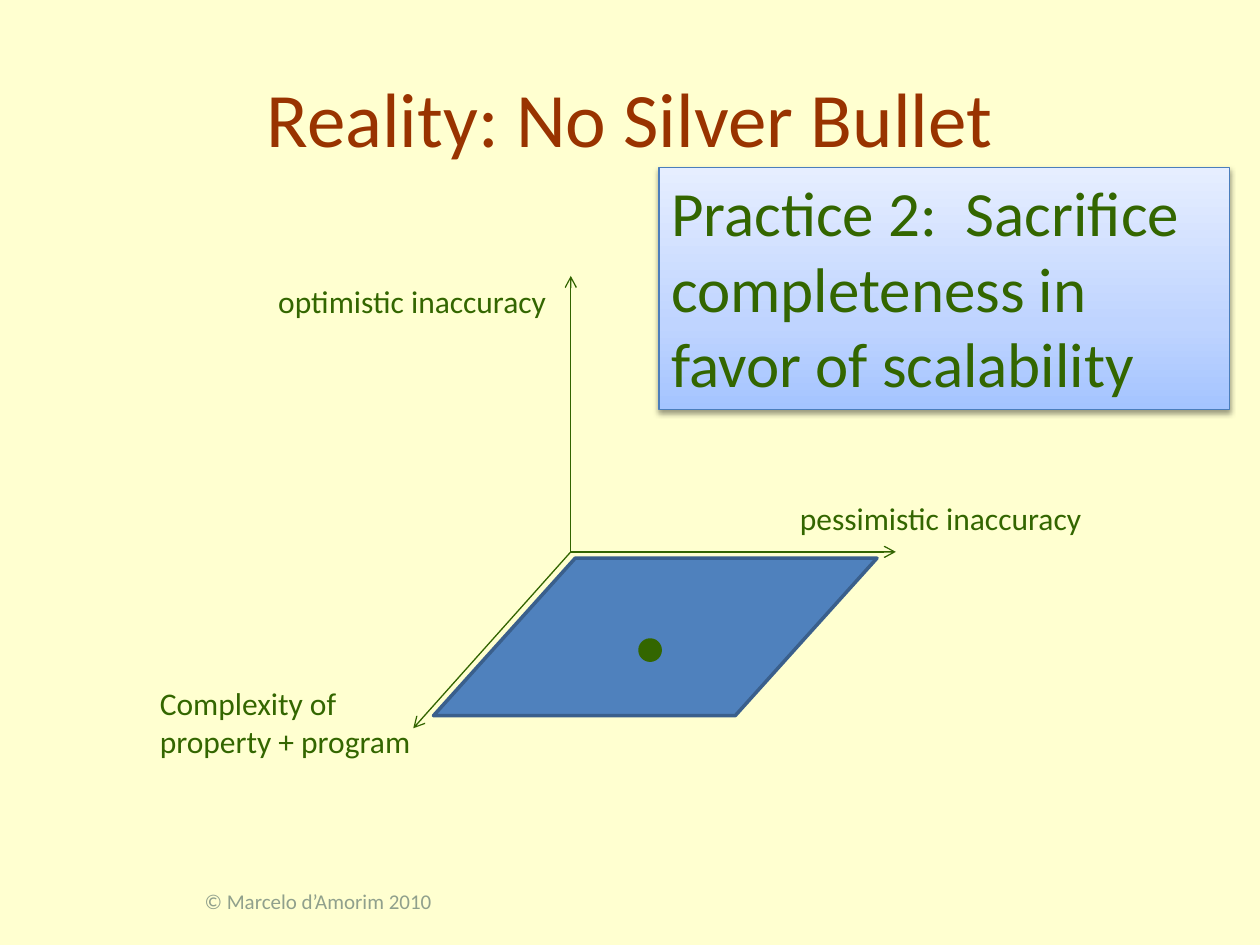
from lxml import etree
from pptx import Presentation
from pptx.dml.color import RGBColor
from pptx.enum import shapes, text
from pptx.oxml.ns import qn
from pptx.util import Inches, Pt

CREAM = RGBColor(0xFF, 0xFF, 0xD0)
RUST = RGBColor(0x99, 0x33, 0x00)
GREEN = RGBColor(0x33, 0x66, 0x00)
AXIS_GREEN = RGBColor(0x32, 0x64, 0x00)
GREY = RGBColor(0x90, 0xA0, 0x8C)
BLUE = RGBColor(0x4F, 0x81, 0xBD)
DARK_BLUE = RGBColor(0x3A, 0x5F, 0x8C)
BOX_LINE = RGBColor(0x4B, 0x7E, 0xBC)
BOX_STOPS = [(0, "A4C4FF"), (35, "BFD4FF"), (100, "E6EEFF")]

ORIGIN = (4.53, 4.38)
AXIS_ENDS = [(4.53, 2.19), (7.11, 4.38), (3.28, 5.78)]
AXIS_LABELS = [
    ("optimistic inaccuracy", (2.11, 2.19, 2.35, 0.4)),
    ("pessimistic inaccuracy", (6.25, 3.91, 2.46, 0.4)),
    ("Complexity of\nproperty + program", (1.17, 5.38, 2.21, 0.71)),
]


def inches(lengths):
    return [Inches(length) for length in lengths]


def write(shape, wording, size, color, align=text.PP_ALIGN.LEFT,
          anchor=text.MSO_ANCHOR.TOP, wrap=True):
    frame = shape.text_frame
    frame.text = wording
    frame.word_wrap = wrap
    frame.vertical_anchor = anchor
    for paragraph in frame.paragraphs:
        paragraph.alignment = align
        for run in paragraph.runs:
            run.font.name = "Calibri"
            run.font.size = Pt(size)
            run.font.color.rgb = color


def add_text(slide, box, wording, size, color, **layout):
    write(slide.shapes.add_textbox(*inches(box)), wording, size, color, **layout)


def add_axis(slide, end):
    axis = slide.shapes.add_connector(
        shapes.MSO_CONNECTOR.STRAIGHT, *inches(ORIGIN + end))
    axis.line.color.rgb = AXIS_GREEN
    axis.line.width = Pt(0.75)
    etree.SubElement(axis.line._get_or_add_ln(), qn("a:tailEnd"), type="arrow")
    etree.SubElement(axis._element.spPr, qn("a:effectLst"))


def add_shape(slide, kind, box, line_color, line_width):
    shape = slide.shapes.add_shape(kind, *inches(box))
    shape.shadow.inherit = False
    shape.line.color.rgb = line_color
    shape.line.width = Pt(line_width)
    return shape


def add_solid(slide, kind, box, fill_color, line_color):
    shape = add_shape(slide, kind, box, line_color, 2)
    shape.fill.solid()
    shape.fill.fore_color.rgb = fill_color
    return shape


def fill_gradient(shape, stops, angle):
    shape.fill.gradient()
    shape.fill.gradient_angle = angle
    stop_list = shape._element.spPr.find(".//" + qn("a:gsLst"))
    for old_stop in list(stop_list):
        stop_list.remove(old_stop)
    for percent, color in stops:
        stop = etree.SubElement(stop_list, qn("a:gs"), pos=str(percent * 1000))
        etree.SubElement(stop, qn("a:srgbClr"), val=color)


def add_soft_shadow(shape):
    effects = shape._element.spPr.find(qn("a:effectLst"))
    shadow = etree.SubElement(
        effects, qn("a:outerShdw"), blurRad=str(Pt(3.1)), dist=str(Pt(1.6)),
        dir="5400000", rotWithShape="0")
    color = etree.SubElement(shadow, qn("a:srgbClr"), val="000000")
    etree.SubElement(color, qn("a:alpha"), val="38000")


def add_practice_box(slide):
    box = add_shape(slide, shapes.MSO_SHAPE.RECTANGLE,
                    (5.23, 1.33, 4.53, 1.92), BOX_LINE, 0.75)
    fill_gradient(box, BOX_STOPS, 90)
    add_soft_shadow(box)
    write(box, "Practice 2:  Sacrifice completeness in favor of scalability",
          36, GREEN)


def main():
    presentation = Presentation()
    presentation.slide_width, presentation.slide_height = inches((10, 7.5))
    slide = presentation.slides.add_slide(presentation.slide_layouts[6])
    slide.background.fill.solid()
    slide.background.fill.fore_color.rgb = CREAM

    centred = {"align": text.PP_ALIGN.CENTER, "anchor": text.MSO_ANCHOR.MIDDLE}
    add_text(slide, (0.5, 0.3, 9, 1.25), "Reality: No Silver Bullet",
             44, RUST, **centred)
    for end in AXIS_ENDS:
        add_axis(slide, end)
    for wording, box in AXIS_LABELS:
        add_text(slide, box, wording, 18, GREEN, wrap=False)

    plane = add_solid(slide, shapes.MSO_SHAPE.PARALLELOGRAM,
                      (3.44, 4.43, 3.52, 1.25), BLUE, DARK_BLUE)
    plane.adjustments[0] = 0.9
    add_solid(slide, shapes.MSO_SHAPE.OVAL,
              (5.08, 5.08, 0.16, 0.16), GREEN, GREEN)
    add_text(slide, (0.94, 6.95, 3.17, 0.4), "© Marcelo d’Amorim 2010",
             12, GREY, **centred)
    add_practice_box(slide)
    presentation.save("out.pptx")


if __name__ == "__main__":
    main()
